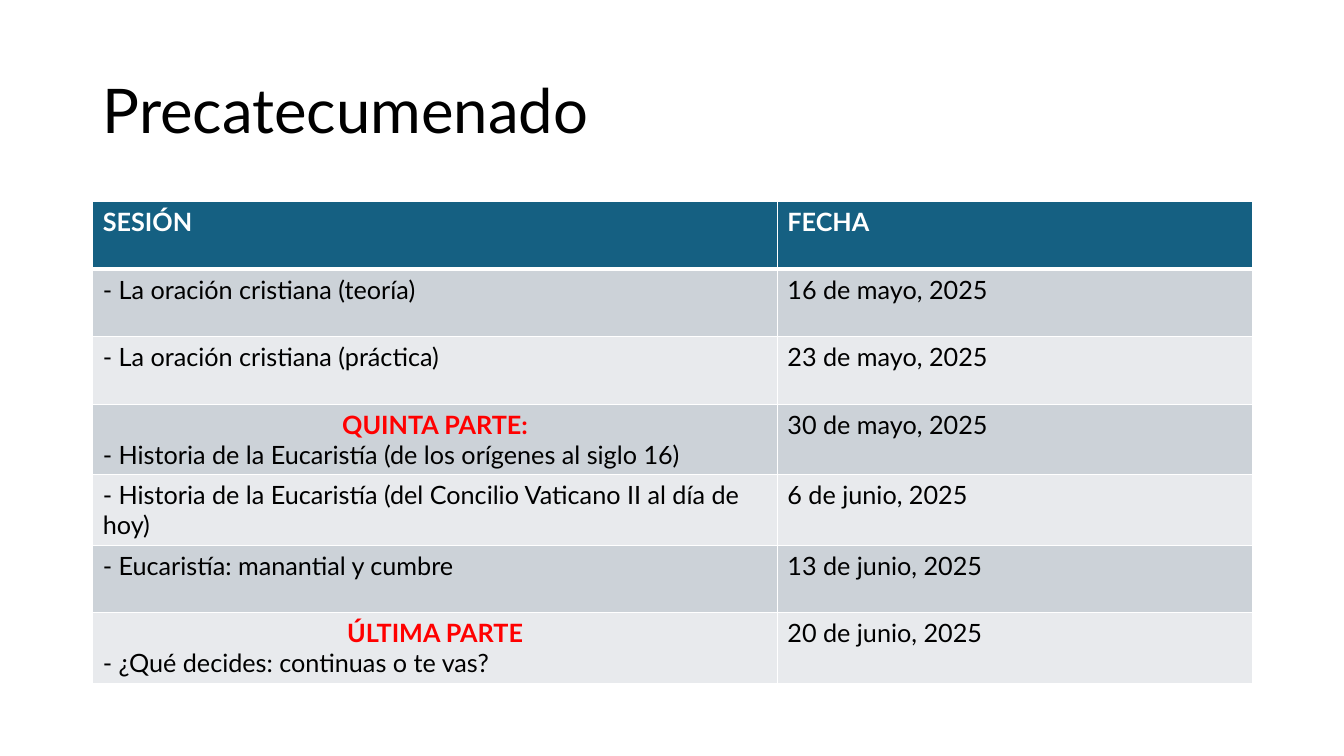
import pptx
import pptx.dml.color
import pptx.enum.text
import pptx.oxml
import pptx.oxml.ns
import pptx.util

PX = 9144
FONT = "Lato"
RGB = pptx.dml.color.RGBColor
WHITE = RGB(0xFF, 0xFF, 0xFF)
BLACK = RGB(0x00, 0x00, 0x00)
RED = RGB(0xFF, 0x00, 0x00)
TEAL = RGB(0x15, 0x60, 0x82)
GREY = RGB(0xCC, 0xD2, 0xD8)
PALE = RGB(0xE8, 0xEA, 0xED)

ALIGN = pptx.enum.text.PP_ALIGN
HEAD = {"size": 18, "color": WHITE, "bold": True}
BODY = {"size": 18, "color": BLACK, "bold": False}
PART = {"size": 18, "color": RED, "bold": True}
TITLE = {"size": 44, "color": BLACK, "bold": False}

WIDTHS = (679, 471)
ROW = 67
ROWS = (
    ("", "SESIÓN", "FECHA"),
    ("", "- La oración cristiana (teoría)", "16 de mayo, 2025"),
    ("", "- La oración cristiana (práctica)", "23 de mayo, 2025"),
    ("QUINTA PARTE:", "- Historia de la Eucaristía (de los orígenes al siglo 16)", "30 de mayo, 2025"),
    ("", "- Historia de la Eucaristía (del Concilio Vaticano II al día de hoy)", "6 de junio, 2025"),
    ("", "- Eucaristía: manantial y cumbre", "13 de junio, 2025"),
    ("ÚLTIMA PARTE", "- ¿Qué decides: continuas o te vas?", "20 de junio, 2025"),
)


def px(count):
    """Turn whole pixels into EMU."""
    return pptx.util.Emu(count * PX)


def put(item, values):
    """Set each named attribute of an item."""
    for name, value in values.items():
        setattr(item, name, value)


def write(para, text, look, align=ALIGN.LEFT):
    """Write one formatted run into a paragraph."""
    para.alignment = align
    run = para.add_run()
    run.text = text
    put(run.font, {"name": FONT, "size": pptx.util.Pt(look["size"]), "bold": look["bold"]})
    run.font.color.rgb = look["color"]


def edge(cell, top, base):
    """Draw white borders around a cell, with widths in points."""
    props = cell._tc.get_or_add_tcPr()
    sides = {"L": 1, "R": 1, "T": top, "B": base}
    for place, (side, width) in enumerate(sides.items()):
        line = pptx.oxml.parse_xml(
            f'<a:ln{side} {pptx.oxml.ns.nsdecls("a")} w="{pptx.util.Pt(width)}">'
            f'<a:solidFill><a:srgbClr val="{WHITE}"/></a:solidFill></a:ln{side}>'
        )
        props.insert(place, line)


def fill(cell, color):
    """Fill a cell with one colour."""
    cell.fill.solid()
    cell.fill.fore_color.rgb = color


def title(slide, text):
    """Add the slide heading."""
    frame = slide.shapes.add_textbox(px(92), px(40), px(1150), px(145)).text_frame
    put(frame, {"word_wrap": True, "vertical_anchor": pptx.enum.text.MSO_ANCHOR.MIDDLE})
    para = frame.paragraphs[0]
    para.line_spacing = 0.9
    write(para, text, TITLE)


def agenda(slide):
    """Add the table of sessions and dates."""
    table = slide.shapes.add_table(
        len(ROWS), len(WIDTHS), px(92), px(200), px(sum(WIDTHS)), px(ROW * len(ROWS))
    ).table
    for column, width in zip(table.columns, WIDTHS):
        column.width = px(width)
    for index, (part, *texts) in enumerate(ROWS):
        table.rows[index].height = px(ROW)
        shade = (PALE if index % 2 == 0 else GREY) if index else TEAL
        for col, text in enumerate(texts):
            cell = table.cell(index, col)
            fill(cell, shade)
            edge(cell, 3 if index == 1 else 1, 3 if index == 0 else 1)
            para = cell.text_frame.paragraphs[0]
            if part and col == 0:
                write(para, part, PART, ALIGN.CENTER)
                para = cell.text_frame.add_paragraph()
            write(para, text, BODY if index else HEAD)


def main():
    """Build and save the slide."""
    deck = pptx.Presentation()
    put(deck, {"slide_width": px(1333), "slide_height": px(750)})
    slide = deck.slides.add_slide(deck.slide_layouts[6])
    title(slide, "Precatecumenado")
    agenda(slide)
    deck.save("out.pptx")


if __name__ == "__main__":
    main()
